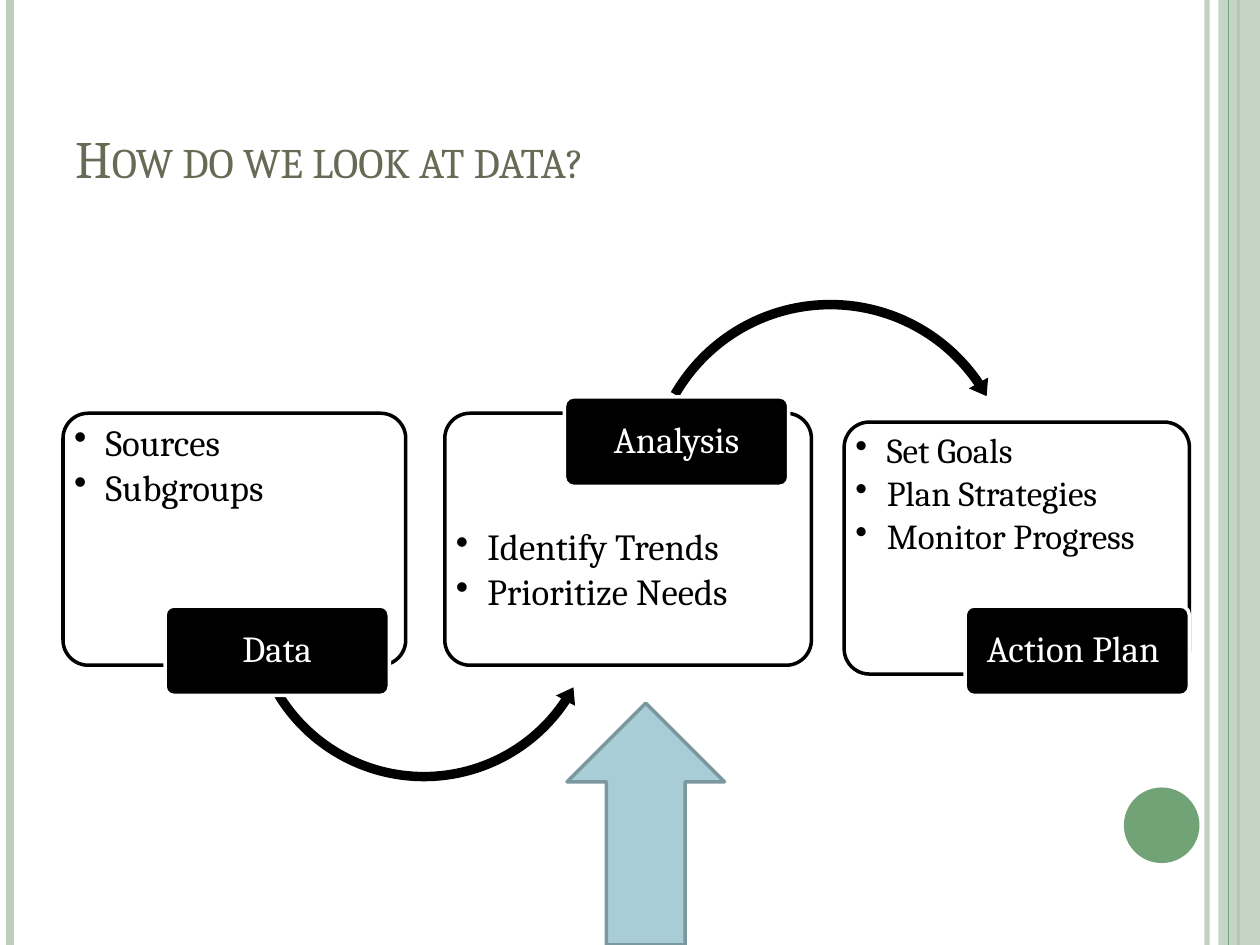
from lxml.etree import SubElement
from pptx import Presentation
from pptx.dml.color import RGBColor
from pptx.enum.shapes import MSO_CONNECTOR, MSO_SHAPE
from pptx.enum.text import MSO_ANCHOR, PP_ALIGN
from pptx.oxml.ns import qn
from pptx.util import Inches, Pt

COLORS = {
    "sage": "BCCEBD", "green": "72A376", "title": "676A55", "black": "000000",
    "white": "FFFFFF", "blue": "A8CDD7", "blue_edge": "7C989F",
}


def add_shape(kind, left, top, width, height, fill, line=None):
    shape = slide.shapes.add_shape(
        kind, Inches(left), Inches(top), Inches(width), Inches(height))
    shape.shadow.inherit = False
    shape.fill.solid()
    shape.fill.fore_color.rgb = RGBColor.from_string(COLORS[fill])
    if line:
        shape.line.color.rgb = RGBColor.from_string(COLORS[line])
        shape.line.width = Pt(2)
    else:
        shape.line.fill.background()
    return shape


def write_text(shape, lines, size, color, align=PP_ALIGN.LEFT, anchor=MSO_ANCHOR.TOP,
               margins=(0.1, 0.05), spacing=1, after=0, bullet=False, small_caps=False):
    """Fill a shape with one paragraph per line; margins are (sides, top)."""
    frame = shape.text_frame
    frame.word_wrap = True
    frame.vertical_anchor = anchor
    frame.margin_left = frame.margin_right = Inches(margins[0])
    frame.margin_top = Inches(margins[1])
    frame.margin_bottom = Inches(min(margins))
    for index, line in enumerate(lines):
        paragraph = frame.add_paragraph() if index else frame.paragraphs[0]
        paragraph.alignment = align
        paragraph.line_spacing = spacing
        paragraph.space_after = Pt(after)
        run = paragraph.add_run()
        run.text = line
        run.font.name = "Cambria"
        run.font.size = Pt(size)
        run.font.color.rgb = RGBColor.from_string(COLORS[color])
        if small_caps:
            run.font._element.set("cap", "small")
        if bullet:
            properties = paragraph._p.get_or_add_pPr()
            properties.set("marL", str(Inches(0.25)))
            properties.set("indent", str(-Inches(0.25)))
            SubElement(properties, qn("a:buChar"), char="•")


presentation = Presentation()
presentation.slide_width = Inches(10)
presentation.slide_height = Inches(7.5)
slide = presentation.slides.add_slide(presentation.slide_layouts[6])

# Side stripes
band = add_shape(MSO_SHAPE.RECTANGLE, 9.67, 0, 0.33, 7.5, "sage")
stripes = []
for x, color, width in [(9.58, "sage", 3), (0.08, "sage", 4.5),
                        (9.83, "green", 1.5), (9.75, "green", 0.75)]:
    stripe = slide.shapes.add_connector(
        MSO_CONNECTOR.STRAIGHT, Inches(x), 0, Inches(x), Inches(7.5))
    stripe.line.color.rgb = RGBColor.from_string(COLORS[color])
    stripe.line.width = Pt(width)
    SubElement(stripe._element.spPr, qn("a:effectLst"))
    stripes.append(stripe)
stripes[2]._element.addnext(band._element)  # the band veils the wider green stripe
for element, opacity in [(band._element, 87000), (stripes[0]._element, 93000)]:
    color_element = next(element.spPr.iter(qn("a:srgbClr")))
    SubElement(color_element, qn("a:alpha"), val=str(opacity))
add_shape(MSO_SHAPE.OVAL, 8.92, 6.25, 0.6, 0.6, "green")

title = slide.shapes.add_textbox(Inches(0.5), Inches(0.3), Inches(8.17), Inches(1.25))
write_text(title, ["How do we look at data?"], size=30, color="title",
           anchor=MSO_ANCHOR.BOTTOM, small_caps=True)

# Process steps: card (left, top, width), text top margin, bullets, size, label, arrow
steps = [
    ((0.5, 3.28, 2.72), 0.03, ["Sources", "Subgroups"], 21, ("Data", 1.31, 4.81),
     (MSO_SHAPE.LEFT_CIRCULAR_ARROW, 1.93, 3.38, 2.87,
      (0.026, 3.139, 20.157, 89.507, 0.03))),
    ((3.53, 3.28, 2.91), 0.86, ["Identify Trends", "Prioritize Needs"], 21,
     ("Analysis", 4.48, 3.15),
     (MSO_SHAPE.CIRCULAR_ARROW, 5.08, 2.33, 3.02,
      (0.025, 2.978, 195.452, 125.941, 0.029))),
    ((6.7, 3.35, 2.74), 0.03, ["Set Goals", "Plan Strategies", "Monitor Progress"], 20,
     ("Action Plan ", 7.66, 4.81), None),
]
for (left, top, width), text_top, bullets, size, label, arrow in steps:
    card = add_shape(MSO_SHAPE.ROUNDED_RECTANGLE, left, top, width, 2, "white", "black")
    card.adjustments[0] = 0.1
    write_text(card, bullets, size=size, color="black", margins=(0.03, text_top),
               spacing=0.9, after=3, bullet=True)
    if arrow:
        kind, arrow_left, arrow_top, side, adjustments = arrow
        arc = add_shape(kind, arrow_left, arrow_top, side, side, "black")
        for index, value in enumerate(adjustments):
            arc.adjustments[index] = value
    name, label_left, label_top = label
    tag = add_shape(MSO_SHAPE.ROUNDED_RECTANGLE, label_left, label_top, 1.78, 0.71,
                    "black", "white")
    tag.adjustments[0] = 0.1
    write_text(tag, [name], size=21, color="white", align=PP_ALIGN.CENTER,
               anchor=MSO_ANCHOR.MIDDLE, margins=(0.04, 0.03), spacing=0.9)

add_shape(MSO_SHAPE.UP_ARROW, 4.5, 5.58, 1.25, 1.92, "blue", "blue_edge")

presentation.save("out.pptx")
